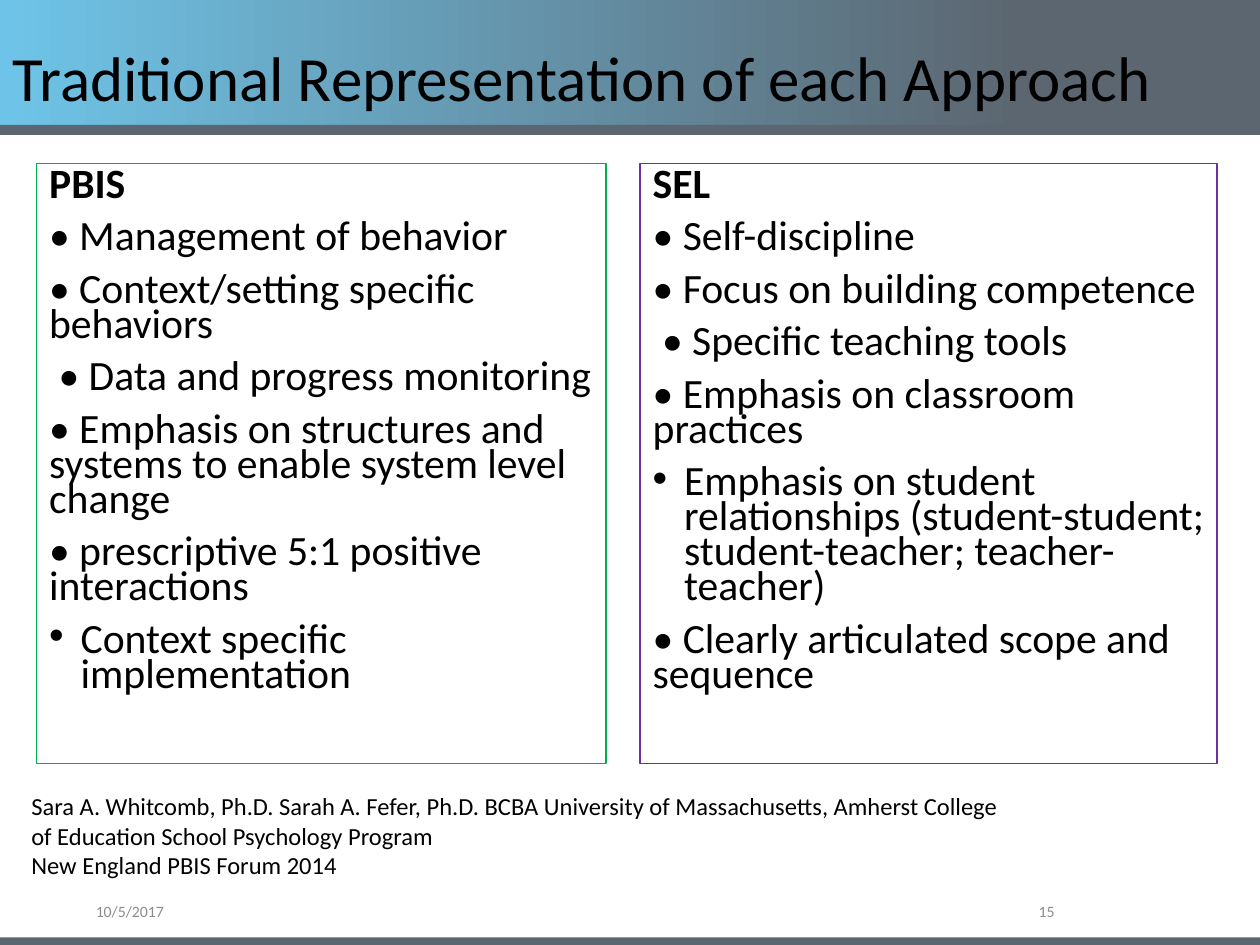
from lxml import etree
from pptx import Presentation
from pptx import util as u
from pptx.dml import color
from pptx.enum import shapes, text
from pptx.oxml import ns

WIDTH, HEIGHT = 10, 7.5
SLATE, SKY, GREY, BLACK = "5C6670", "6EC4E8", "8C8C8C", "000000"
BODY_TOP, BODY_HEIGHT = 1.3, 4.76
COLUMNS = [
    (0.29, 4.52, "00B050", [
        "PBIS",
        "• Management of behavior",
        "• Context/setting specific behaviors",
        " • Data and progress monitoring",
        "• Emphasis on structures and systems to enable system level change",
        "• prescriptive 5:1 positive interactions",
        "Context specific implementation",
    ]),
    (5.08, 4.58, "7030A0", [
        "SEL",
        "• Self-discipline",
        "• Focus on building competence",
        " • Specific teaching tools",
        "• Emphasis on classroom practices",
        "Emphasis on student relationships (student-student; student-teacher; teacher-teacher)",
        "• Clearly articulated scope and sequence",
    ]),
]
CREDITS = [
    "Sara A. Whitcomb, Ph.D. Sarah A. Fefer, Ph.D. BCBA University of Massachusetts, "
    "Amherst College of Education School Psychology Program",
    "New England PBIS Forum 2014",
]


def rgb(value):
    """Return a colour from a hex string."""
    return color.RGBColor.from_string(value)


def apply(target, values):
    """Set every attribute named in a dict of format values."""
    for name, value in values.items():
        setattr(target, name, value)


def place(shape, left, top, width, height):
    """Move and size a shape in inches."""
    box = {"left": left, "top": top, "width": width, "height": height}
    apply(shape, {name: u.Inches(value) for name, value in box.items()})


def write(paragraph, words, size, colour=BLACK, bold=False, **layout):
    """Fill a paragraph with one formatted run."""
    apply(paragraph, layout)
    run = paragraph.add_run()
    run.text = words
    apply(run.font, {"name": "Calibri", "size": u.Pt(size), "bold": bold})
    run.font.color.rgb = rgb(colour)


def paragraphs(frame, lines):
    """Yield one paragraph of the frame with each line of text."""
    for index, line in enumerate(lines):
        yield frame.add_paragraph() if index else frame.paragraphs[0], line


def set_bullet(paragraph, hanging):
    """Give a paragraph a hanging bullet, or remove the inherited one."""
    properties = paragraph._p.get_or_add_pPr()
    indent = u.Inches(0.25) if hanging else 0
    properties.set("marL", str(indent))
    properties.set("indent", str(-indent))
    if hanging:
        etree.SubElement(properties, ns.qn("a:buFont"), typeface="Arial")
        etree.SubElement(properties, ns.qn("a:buChar"), char="•")
    else:
        etree.SubElement(properties, ns.qn("a:buNone"))


def add_bar(slide, order, top, height, gradient=False):
    """Add a full-width band behind the placeholders."""
    bar = slide.shapes.add_shape(shapes.MSO_SHAPE.RECTANGLE, 0, 0, 0, 0)
    place(bar, 0, top, WIDTH, height)
    bar.shadow.inherit = False
    bar.line.fill.background()
    if gradient:
        bar.fill.gradient()
        bar.fill.gradient_angle = 0
        for stop, colour, position in zip(bar.fill.gradient_stops, (SKY, SLATE), (0, 0.81)):
            stop.color.rgb = rgb(colour)
            stop.position = position
    else:
        bar.fill.solid()
        bar.fill.fore_color.rgb = rgb(SLATE)
    slide.shapes._spTree.insert(2 + order, bar._element)


def fill_title(title, words):
    """Place and write the slide title."""
    place(title, 0, 0.19, 9.66, 0.91)
    apply(title.text_frame, {"vertical_anchor": text.MSO_ANCHOR.MIDDLE,
                             "auto_size": text.MSO_AUTO_SIZE.NONE})
    write(title.text_frame.paragraphs[0], words, 36,
          alignment=text.PP_ALIGN.LEFT, line_spacing=0.9)


def fill_column(body, left, width, colour, lines):
    """Place an outlined body with a bold heading and its points."""
    place(body, left, BODY_TOP, width, BODY_HEIGHT)
    body.line.color.rgb = rgb(colour)
    body.line.width = u.Pt(0.75)
    frame = body.text_frame
    frame.auto_size = text.MSO_AUTO_SIZE.NONE
    for paragraph, line in paragraphs(frame, lines):
        heading = line == lines[0]
        set_bullet(paragraph, not heading and "•" not in line)
        write(paragraph, line, 23.8, bold=heading, line_spacing=0.7,
              space_before=u.Pt(0 if heading else 10))


def add_text(slide, box, lines, size, colour=BLACK, alignment=text.PP_ALIGN.LEFT, **frame_format):
    """Add a wrapped text box."""
    shape = slide.shapes.add_textbox(0, 0, 0, 0)
    place(shape, *box)
    frame = shape.text_frame
    apply(frame, {"word_wrap": True, **frame_format})
    for paragraph, line in paragraphs(frame, lines):
        write(paragraph, line, size, colour, alignment=alignment)


def main():
    """Build and save the slide."""
    presentation = Presentation()
    apply(presentation, {"slide_width": u.Inches(WIDTH), "slide_height": u.Inches(HEIGHT)})
    slide = presentation.slides.add_slide(presentation.slide_layouts[3])
    title, *bodies = slide.placeholders
    for order, bar in enumerate([(0, 0.99, True), (0.99, 0.08), (7.44, 0.08)]):
        add_bar(slide, order, *bar)
    fill_title(title, "Traditional Representation of each Approach")
    for body, column in zip(bodies, COLUMNS):
        fill_column(body, *column)
    add_text(slide, (0.15, 6.23, 7.88, 0.81), CREDITS, 14)
    side, edge = u.Inches(0.07), u.Inches(0.04)
    footer = {"vertical_anchor": text.MSO_ANCHOR.MIDDLE, "margin_left": side,
              "margin_right": side, "margin_top": edge, "margin_bottom": edge}
    add_text(slide, (0.69, 7.12, 2.25, 0.23), ["10/5/2017"], 9, GREY, **footer)
    add_text(slide, (7.06, 7.12, 1.38, 0.23), ["15"], 9, GREY, text.PP_ALIGN.RIGHT, **footer)
    presentation.save("out.pptx")


if __name__ == "__main__":
    main()
